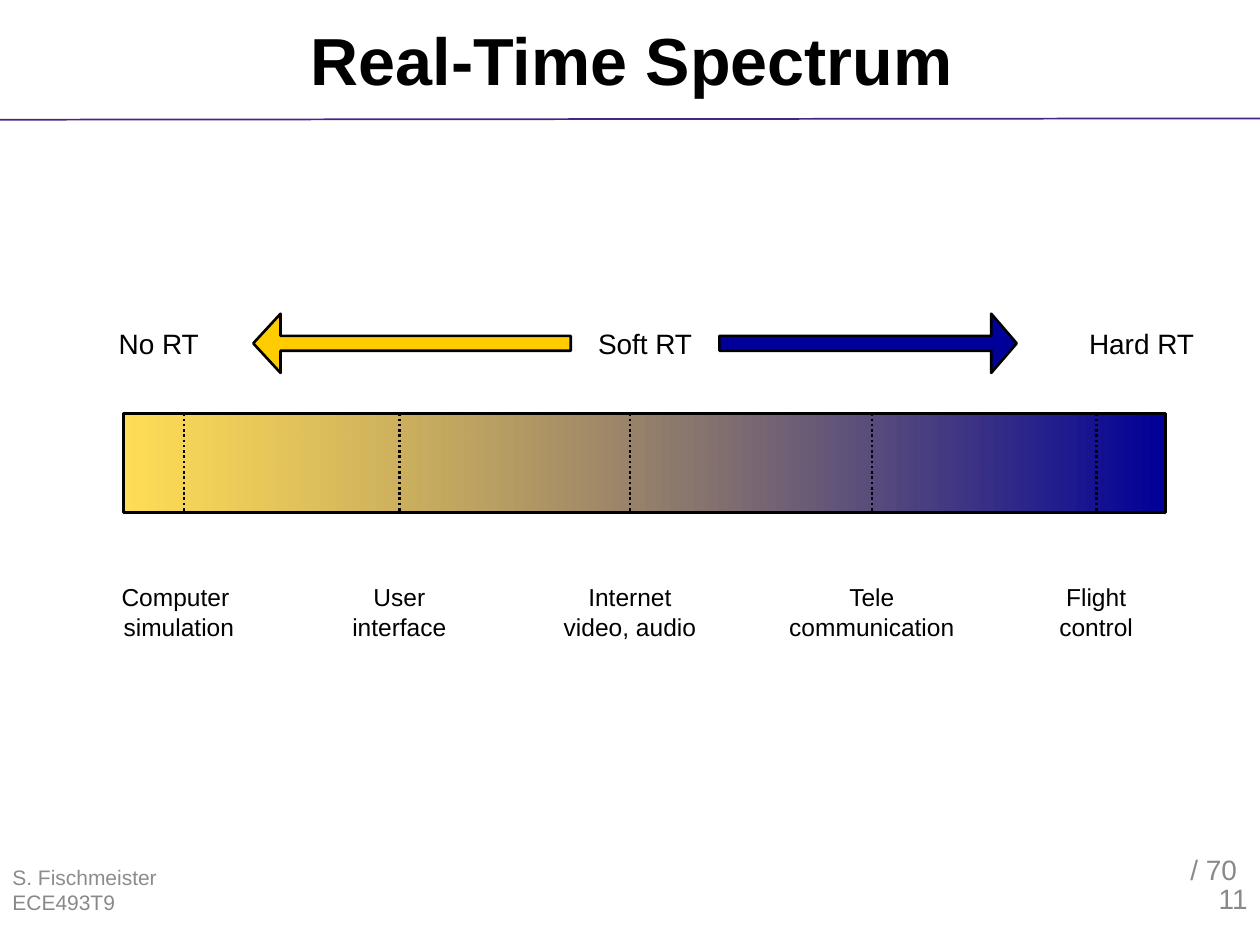
"""Build the Real-Time Spectrum slide on a grid of 100 columns by 75 rows."""
from dataclasses import dataclass

import lxml.etree
import pptx
import pptx.dml.color
import pptx.enum.dml
import pptx.enum.shapes
import pptx.enum.text
import pptx.oxml.ns
import pptx.oxml.xmlchemy
import pptx.presentation
import pptx.shapes.autoshape
import pptx.shapes.connector
import pptx.slide
import pptx.text.text
import pptx.util

ALIGN = pptx.enum.text.PP_ALIGN
ANCHOR = pptx.enum.text.MSO_ANCHOR
SHAPE = pptx.enum.shapes.MSO_SHAPE
COLUMN = pptx.util.Inches(0.1)
ROW = pptx.util.Inches(0.1)


@dataclass(frozen=True)
class Theme:
    font: str = "Arial"
    ink: str = "000000"
    rule: str = "4A2384"
    footer: str = "898989"
    author: str = "8C8C8C"
    soft: str = "FFCC00"
    hard: str = "000099"
    soft_opacity: int = 66
    title_size: int = 38
    level_size: int = 16
    example_size: int = 14
    footer_size: int = 12
    page_size: int = 16
    outline: float = 1.5
    rule_width: float = 1


@dataclass(frozen=True)
class Box:
    column: float
    row: float
    columns: float
    rows: float

    def lengths(self) -> tuple[int, int, int, int]:
        return (round(self.column * COLUMN), round(self.row * ROW),
                round(self.columns * COLUMN), round(self.rows * ROW))


@dataclass(frozen=True)
class Label:
    text: str
    center: float


@dataclass(frozen=True)
class Arrow:
    box: Box
    color: str
    head: float
    rotation: int


@dataclass(frozen=True)
class Note:
    text: str
    box: Box
    size: int
    color: str
    align: ALIGN = ALIGN.LEFT
    anchor: ANCHOR = ANCHOR.BOTTOM


THEME = Theme()
BAR = Box(9.8, 32.8, 82.7, 7.9)
LABEL_COLUMNS, LABEL_ROWS = 13.4, 7.9
LEVEL_ROW, EXAMPLE_ROW = 23.3, 44.6
TICKS = (14.6, 31.7, 50, 69.2, 87)
LEVELS = (Label("No RT", 12.6), Label("Soft RT", 51.2), Label("Hard RT", 90.6))
EXAMPLES = (
    Label("Computer \nsimulation", 14.2),
    Label("User\ninterface", 31.7),
    Label("Internet\nvideo, audio", 50),
    Label("Tele\ncommunication", 69.2),
    Label("Flight\ncontrol", 87),
)
ARROWS = (
    Arrow(Box(57.1, 24.9, 23.6, 4.7), THEME.hard, 0.43, 0),
    Arrow(Box(20.1, 24.9, 25.2, 4.7), THEME.soft, 0.46, 180),
)
NOTES = (
    Note("/ 70", Box(93.5, 66.8, 10.6, 4), THEME.page_size, THEME.footer),
    Note("ECE493T9", Box(0, 68.1, 20.8, 5), THEME.footer_size, THEME.footer),
    Note("S. Fischmeister", Box(0, 68.1, 31.7, 5), THEME.footer_size, THEME.author,
         anchor=ANCHOR.TOP),
    Note("11", Box(79.2, 68.1, 20.8, 5), THEME.page_size, THEME.footer, ALIGN.RIGHT),
)


def rgb(color: str) -> pptx.dml.color.RGBColor:
    return pptx.dml.color.RGBColor.from_string(color)


def write(frame: pptx.text.text.TextFrame, text: str, size: int, color: str,
          align: ALIGN, anchor: ANCHOR, wrap: bool = True, bold: bool = False) -> None:
    frame.word_wrap = wrap
    frame.auto_size = pptx.enum.text.MSO_AUTO_SIZE.NONE
    frame.vertical_anchor = anchor
    paragraph = frame.paragraphs[0]
    paragraph.text = text
    paragraph.alignment = align
    paragraph.font.name = THEME.font
    paragraph.font.size = pptx.util.Pt(size)
    paragraph.font.bold = bold
    paragraph.font.color.rgb = rgb(color)


def add_title(slide: pptx.slide.Slide, text: str, box: Box) -> None:
    title = slide.shapes.title
    title.left, title.top, title.width, title.height = box.lengths()
    write(title.text_frame, text, THEME.title_size, THEME.ink,
          ALIGN.CENTER, ANCHOR.MIDDLE, bold=True)


def add_note(slide: pptx.slide.Slide, note: Note) -> None:
    shape = slide.shapes.add_textbox(*note.box.lengths())
    write(shape.text_frame, note.text, note.size, note.color, note.align, note.anchor)


def add_label(slide: pptx.slide.Slide, label: Label, row: float, size: int) -> None:
    box = Box(label.center - LABEL_COLUMNS / 2, row, LABEL_COLUMNS, LABEL_ROWS)
    shape = slide.shapes.add_textbox(*box.lengths())
    write(shape.text_frame, label.text, size, THEME.ink,
          ALIGN.CENTER, ANCHOR.MIDDLE, wrap=False)


def add_line(slide: pptx.slide.Slide, start: tuple[float, float], end: tuple[float, float],
             color: str, width: float) -> pptx.shapes.connector.Connector:
    points = [round(value * unit) for point in (start, end)
              for value, unit in zip(point, (COLUMN, ROW))]
    line = slide.shapes.add_connector(pptx.enum.shapes.MSO_CONNECTOR.STRAIGHT, *points)
    line.line.color.rgb = rgb(color)
    line.line.width = pptx.util.Pt(width)
    properties = line._element.spPr
    lxml.etree.SubElement(properties, pptx.oxml.ns.qn("a:effectLst"))
    return line


def add_outlined(slide: pptx.slide.Slide, kind: SHAPE,
                 box: Box) -> pptx.shapes.autoshape.Shape:
    shape = slide.shapes.add_shape(kind, *box.lengths())
    shape.shadow.inherit = False
    shape.line.color.rgb = rgb(THEME.ink)
    shape.line.width = pptx.util.Pt(THEME.outline)
    return shape


def add_spectrum(slide: pptx.slide.Slide) -> None:
    bar = add_outlined(slide, SHAPE.RECTANGLE, BAR)
    bar.fill.gradient()
    bar.fill.gradient_angle = 0
    for stop, color in zip(bar.fill.gradient_stops, (THEME.soft, THEME.hard)):
        stop.color.rgb = rgb(color)
    first_color = next(bar._element.spPr.iter(pptx.oxml.ns.qn("a:srgbClr")))
    alpha = lxml.etree.SubElement(first_color, pptx.oxml.ns.qn("a:alpha"))
    alpha.set("val", str(THEME.soft_opacity * 1000))
    for column in TICKS:
        tick = add_line(slide, (column, BAR.row), (column, BAR.row + BAR.rows),
                        THEME.ink, THEME.outline)
        tick.line.dash_style = pptx.enum.dml.MSO_LINE.ROUND_DOT


def add_arrow(slide: pptx.slide.Slide, arrow: Arrow) -> None:
    shape = add_outlined(slide, SHAPE.RIGHT_ARROW, arrow.box)
    shape.fill.solid()
    shape.fill.fore_color.rgb = rgb(arrow.color)
    shape.adjustments[0], shape.adjustments[1] = 0.25, arrow.head
    shape.rotation = arrow.rotation


def main() -> None:
    presentation = pptx.Presentation()
    presentation.slide_width, presentation.slide_height = 100 * COLUMN, 75 * ROW
    slide = presentation.slides.add_slide(presentation.slide_layouts[5])
    add_line(slide, (0, 9.5), (100, 9.4), THEME.rule, THEME.rule_width)
    add_title(slide, "Real-Time Spectrum", Box(3.3, 0, 93.7, 9.4))
    for note in NOTES:
        add_note(slide, note)
    add_spectrum(slide)
    for arrow in ARROWS:
        add_arrow(slide, arrow)
    for labels, row, size in ((LEVELS, LEVEL_ROW, THEME.level_size),
                              (EXAMPLES, EXAMPLE_ROW, THEME.example_size)):
        for label in labels:
            add_label(slide, label, row, size)
    presentation.save("out.pptx")


if __name__ == "__main__":
    main()
